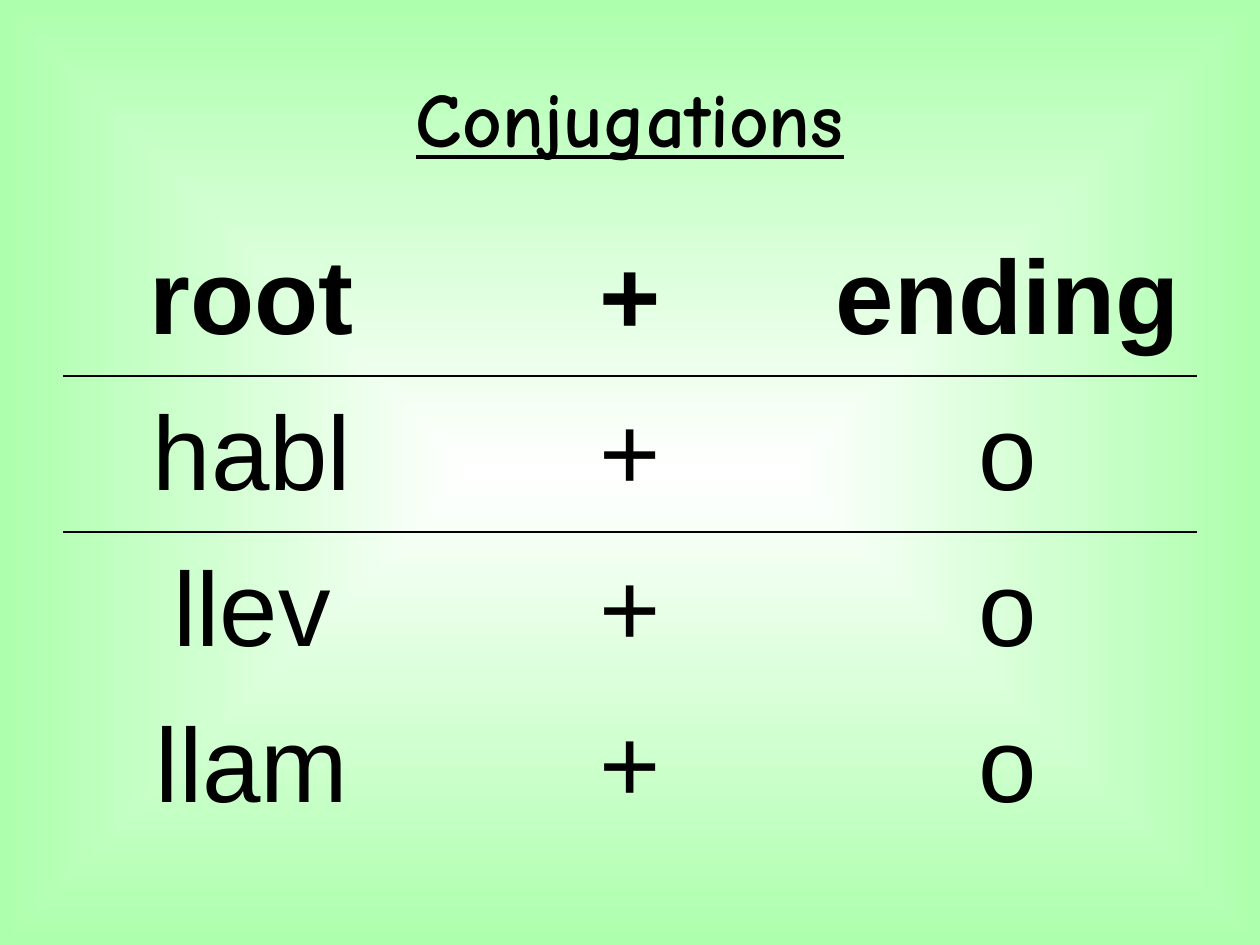
from pptx import Presentation
from pptx.dml.color import RGBColor as RGB
from pptx.enum.text import MSO_ANCHOR as Anchor, PP_ALIGN as Align
from pptx.oxml import parse_xml
from pptx.oxml.ns import nsdecls, qn
from pptx.util import Emu, Pt

COLORS = {"ink": "000000", "center": "FFFFFF", "edge": "ADFFAD"}
NO_STYLE = "{2D5ABB26-0587-4C30-8999-92F81FD0307C}"
CONJUGATIONS = [
    ("root", "+", "ending"),
    ("habl", "+", "o"),
    ("llev", "+", "o"),
    ("llam", "+", "o"),
]


def px(length):
    """Turn whole pixels, 126 to the inch, into EMU."""
    return Emu(round(length * 914400 / 126))


def paint_background(slide):
    """Fill the slide with a gradient that spreads from its center."""
    slide.element.cSld.insert(0, parse_xml(
        f'<p:bg {nsdecls("p", "a")}><p:bgPr><a:gradFill rotWithShape="0"><a:gsLst>'
        f'<a:gs pos="0"><a:srgbClr val="{COLORS["center"]}"/></a:gs>'
        f'<a:gs pos="100000"><a:srgbClr val="{COLORS["edge"]}"/></a:gs></a:gsLst>'
        '<a:path path="shape"><a:fillToRect l="50000" t="50000" r="50000" b="50000"/></a:path>'
        '</a:gradFill><a:effectLst/></p:bgPr></p:bg>'))


def style_text(paragraph, font_name, size, bold, underline=False):
    """Center a paragraph and format its runs."""
    paragraph.alignment = Align.CENTER
    for run in paragraph.runs:
        font = run.font
        font.name, font.size = font_name, Pt(size)
        font.bold, font.underline = bold, underline
        font.color.rgb = RGB.from_string(COLORS["ink"])


def add_title(slide, title):
    """Add the underlined heading."""
    frame = slide.shapes.add_textbox(px(63), px(38), px(1134), px(157)).text_frame
    frame.word_wrap = True
    frame.vertical_anchor = Anchor.MIDDLE
    frame.text = title
    style_text(frame.paragraphs[0], "Comic Neue", 44, True, True)


def add_border(cell, side):
    """Draw a thin line along one side of a cell."""
    cell.fill.background()
    cell._tc.get_or_add_tcPr().insert(0, parse_xml(
        f'<a:{side} {nsdecls("a")} w="12700"><a:solidFill>'
        f'<a:srgbClr val="{COLORS["ink"]}"/></a:solidFill></a:{side}>'))


def fill_cell(cell, word, bold):
    """Write one word into an unfilled cell."""
    cell.fill.background()
    cell.vertical_anchor = Anchor.MIDDLE
    cell.text = word
    paragraph = cell.text_frame.paragraphs[0]
    style_text(paragraph, "Arial", 60, bold)
    paragraph._p.get_or_add_pPr().append(parse_xml(
        f'<a:spcBef {nsdecls("a")}><a:spcPct val="20000"/></a:spcBef>'))


def add_conjugations(slide, rows):
    """Add the table of roots and endings with a line under its heading."""
    table = slide.shapes.add_table(
        len(rows), len(rows[0]), px(63), px(220), px(1134), px(624)).table
    table.first_row = table.horz_banding = False
    table._tbl.tblPr.find(qn("a:tableStyleId")).text = NO_STYLE
    for row_index, words in enumerate(rows):
        for column_index, word in enumerate(words):
            cell = table.cell(row_index, column_index)
            fill_cell(cell, word, row_index == 0)
            if row_index < 2:
                add_border(cell, ("lnB", "lnT")[row_index])


def main():
    """Build and save the conjugations slide."""
    deck = Presentation()
    deck.slide_width, deck.slide_height = px(1260), px(945)
    slide = deck.slides.add_slide(deck.slide_layouts[6])
    paint_background(slide)
    add_title(slide, "Conjugations")
    add_conjugations(slide, CONJUGATIONS)
    deck.save("out.pptx")


if __name__ == "__main__":
    main()
